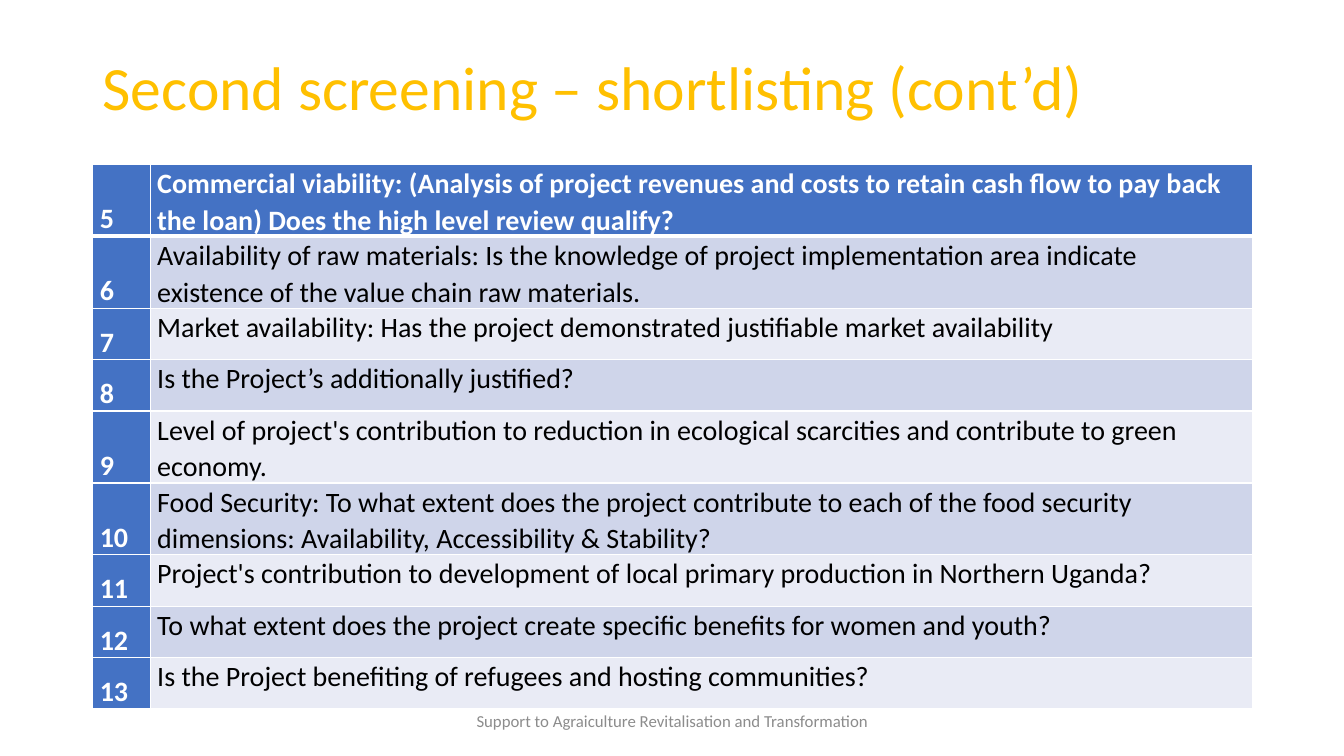
from dataclasses import dataclass

from lxml import etree
from pptx import Presentation
from pptx.dml.color import RGBColor
from pptx.enum.text import MSO_ANCHOR, PP_ALIGN
from pptx.oxml.ns import qn
from pptx.slide import Slide
from pptx.table import Table
from pptx.util import Inches, Pt

TOP, MIDDLE, BOTTOM = MSO_ANCHOR.TOP, MSO_ANCHOR.MIDDLE, MSO_ANCHOR.BOTTOM
LEFT, CENTER = PP_ALIGN.LEFT, PP_ALIGN.CENTER

FONT = "Calibri"
GOLD = RGBColor(0xFF, 0xC0, 0x00)
GREY = RGBColor(0x8C, 0x8C, 0x8C)
WHITE = RGBColor(0xFF, 0xFF, 0xFF)
BLACK = RGBColor(0x00, 0x00, 0x00)
BLUE = RGBColor(0x44, 0x72, 0xC4)
BAND_DARK = RGBColor(0xCF, 0xD5, 0xEA)
BAND_LIGHT = RGBColor(0xE9, 0xEB, 0xF5)

FIRST_NUMBER = 5
COLUMN_WIDTHS = (0.57, 10.93)
ONE_LINE, TWO_LINES = 0.51, 0.69


@dataclass
class Label:
    text: str
    left: float
    top: float
    width: float
    height: float
    size: float
    color: RGBColor
    align: PP_ALIGN = LEFT
    spacing: float = 1.0


@dataclass
class Criterion:
    text: str
    height: float = ONE_LINE


LABELS = [
    Label("Second screening – shortlisting (cont’d)",
          0.92, 0.4, 11.5, 1, 44, GOLD, spacing=0.9),
    Label("Support to Agraiculture Revitalisation and Transformation",
          4.42, 6.95, 4.5, 0.4, 12, GREY, CENTER),
]

CRITERIA = [
    Criterion("Commercial viability: (Analysis of project revenues and costs to retain "
              "cash flow to pay back the loan) Does the high level review qualify?", TWO_LINES),
    Criterion("Availability of raw materials: Is the knowledge of project implementation "
              "area indicate existence of the value chain raw materials.", TWO_LINES),
    Criterion("Market availability: Has the project demonstrated justifiable market availability"),
    Criterion("Is the Project’s additionally justified?"),
    Criterion("Level of project's contribution to reduction in ecological scarcities "
              "and contribute to green economy.", TWO_LINES),
    Criterion("Food Security: To what extent does the project contribute to each of the food "
              "security dimensions: Availability, Accessibility & Stability?", TWO_LINES),
    Criterion("Project's contribution to development of local primary production "
              "in Northern Uganda?"),
    Criterion("To what extent does the project create specific benefits for women and youth?"),
    Criterion("Is the Project benefiting of refugees and hosting communities?"),
]


def format_text(p, size: float, color: RGBColor, spacing: float, bold: bool = False) -> None:
    p.line_spacing = spacing
    for r in p.runs:
        r.font.name = FONT
        r.font.size = Pt(size)
        r.font.bold = bold
        r.font.color.rgb = color


def add_label(s: Slide, label: Label) -> None:
    sp = s.shapes.add_textbox(Inches(label.left), Inches(label.top),
                              Inches(label.width), Inches(label.height))
    tf = sp.text_frame
    tf.word_wrap = True
    tf.vertical_anchor = MIDDLE
    tf.text = label.text
    p = tf.paragraphs[0]
    p.alignment = label.align
    format_text(p, label.size, label.color, label.spacing)


def set_borders(cell, top: float, bottom: float) -> None:
    """Put white lines on the four sides, ahead of the fill as the schema asks."""
    tc_pr = cell._tc.get_or_add_tcPr()
    widths = {"a:lnL": 1, "a:lnR": 1, "a:lnT": top, "a:lnB": bottom}
    for i, (tag, width) in enumerate(widths.items()):
        ln = etree.Element(qn(tag), w=str(Pt(width)))
        fill = etree.SubElement(ln, qn("a:solidFill"))
        etree.SubElement(fill, qn("a:srgbClr"), val=str(WHITE))
        tc_pr.insert(i, ln)


def fill_cell(table: Table, row: int, col: int, text: str) -> None:
    cell = table.cell(row, col)
    strong = row == 0 or col == 0
    cell.text_frame.text = text
    cell.vertical_anchor = BOTTOM if col == 0 else TOP
    cell.margin_left = cell.margin_right = Inches(0.07)
    cell.margin_top = cell.margin_bottom = 0
    band = BAND_DARK if row % 2 else BAND_LIGHT
    cell.fill.solid()
    cell.fill.fore_color.rgb = BLUE if strong else band
    format_text(cell.text_frame.paragraphs[0], 20, WHITE if strong else BLACK, 1.07, strong)
    set_borders(cell, top=3 if row == 1 else 1, bottom=3 if row == 0 else 1)


def add_criteria_table(s: Slide, criteria: list[Criterion]) -> None:
    height = sum(c.height for c in criteria)
    table = s.shapes.add_table(len(criteria), len(COLUMN_WIDTHS), Inches(0.92), Inches(1.63),
                               Inches(sum(COLUMN_WIDTHS)), Inches(height)).table
    for column, width in zip(table.columns, COLUMN_WIDTHS):
        column.width = Inches(width)
    for row, criterion in enumerate(criteria):
        table.rows[row].height = Inches(criterion.height)
        for col, text in enumerate((str(FIRST_NUMBER + row), criterion.text)):
            fill_cell(table, row, col, text)


def main() -> None:
    prs = Presentation()
    prs.slide_width, prs.slide_height = Inches(13.33), Inches(7.5)
    s = prs.slides.add_slide(prs.slide_layouts[6])

    # Title and footer
    for label in LABELS:
        add_label(s, label)

    # Numbered shortlisting criteria
    add_criteria_table(s, CRITERIA)

    prs.save("out.pptx")


if __name__ == "__main__":
    main()
